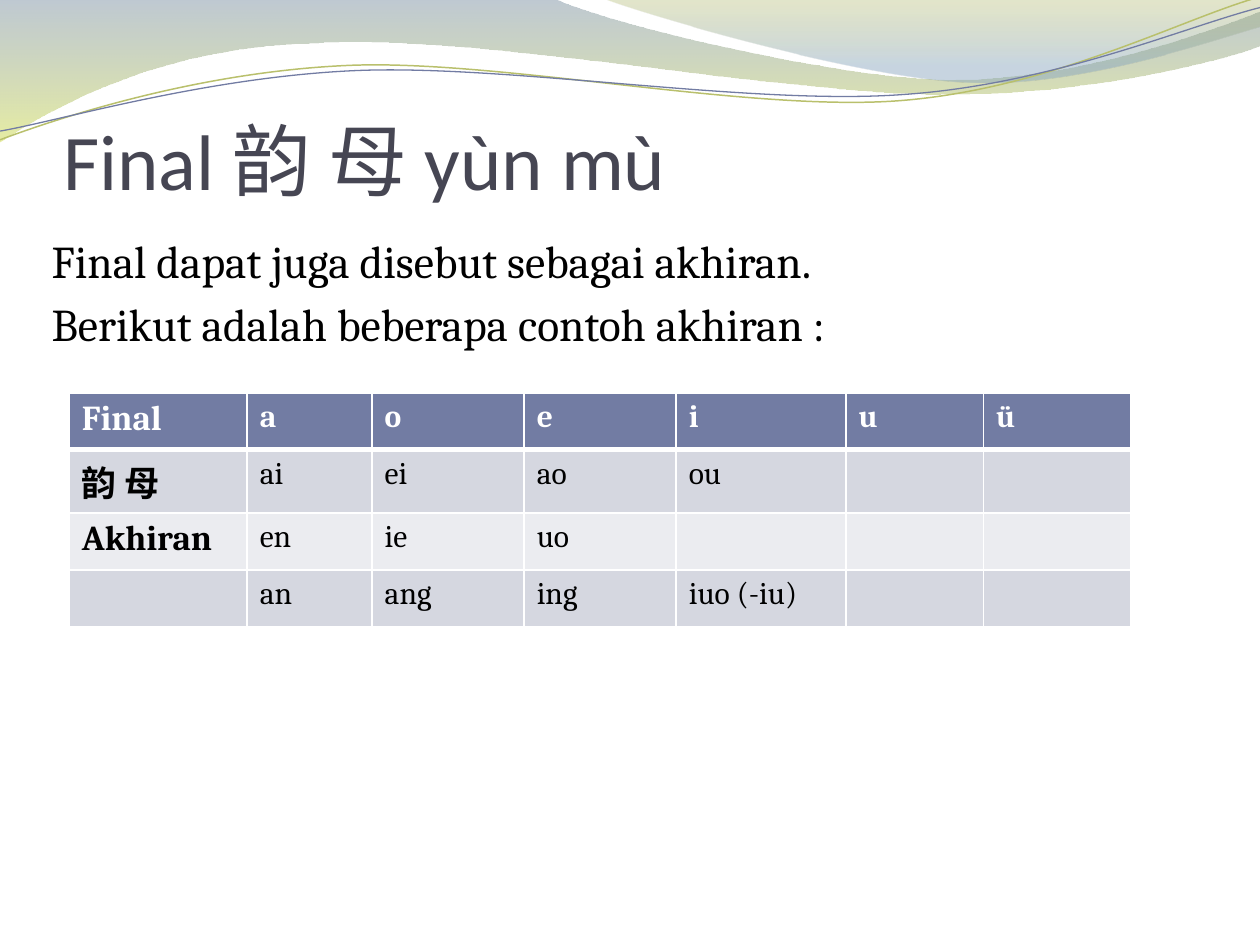
from lxml.etree import SubElement
from pptx import Presentation
from pptx.dml.color import RGBColor
from pptx.enum.text import MSO_ANCHOR, MSO_AUTO_SIZE, PP_ALIGN
from pptx.oxml.ns import qn
from pptx.util import Pt

WHITE = RGBColor(0xFF, 0xFF, 0xFF)
BLACK = RGBColor(0, 0, 0)
SLATE = RGBColor(0x46, 0x46, 0x53)
HEADER = RGBColor(0x72, 0x7C, 0xA3)
BAND_DARK = RGBColor(0xD5, 0xD7, 0xE0)
BAND_LIGHT = RGBColor(0xEB, 0xEC, 0xF0)
OLIVE = RGBColor(0xB9, 0xC0, 0x6C)
STEEL = RGBColor(0x72, 0x88, 0x9B)
LIME = RGBColor(0xD3, 0xDE, 0x57)
MOSS = RGBColor(0xA4, 0xAC, 0x50)
SKY = RGBColor(0x84, 0xA3, 0xBD)

TITLE = "Final 韵 母 yùn mù"
BODY = ["Final dapat juga disebut sebagai akhiran.",
        "Berikut adalah beberapa contoh akhiran :"]
TABLE = [["Final", "a", "o", "e", "i", "u", "ü"],
         ["韵 母", "ai", "ei", "ao", "ou", "", ""],
         ["Akhiran", "en", "ie", "uo", "", "", ""],
         ["", "an", "ang", "ing", "iuo (-iu)", "", ""]]
COL_WIDTHS = [101.7, 71.4, 86.9, 86.9, 97.1, 78.5, 84.2]
ROW_FILLS = [HEADER, BAND_DARK, BAND_LIGHT, BAND_DARK]
ROW_HEIGHT = 32.4
HEADER_BORDERS = [("a:lnL", 1), ("a:lnR", 1), ("a:lnT", 1), ("a:lnB", 3)]

# Each outline is a list of steps: 2 numbers end a line, 6 numbers end a cubic curve.
BANDS = [
    ([(-0.7, -0.7), (316.8, -0.7), (342.7, 12.2, 478.1, 45.4, 545.8, 45.4),
      (614.2, 45.4, 689.8, 18.7, 720, 6.5), (720.7, 25.9),
      (707.8, 31.7, 626.4, 54.7, 537.1, 54),
      (447.8, 54, 275, 20.2, 185, 24.5), (92.9, 25.9, 33.1, 59.8, -0.7, 81.4)],
     [(0, STEEL, 45), (1, LIME, 55)]),
    ([(344.9, -0.7), (366.5, 7.9, 491, 44.6, 553.7, 46.8),
      (616.3, 49.7, 691.9, 23, 720, 15.1), (720, 0)],
     [(0, MOSS, 30), (0.8, SKY, 45)]),
]
LINES = [
    ([(0, 79.9), (34.6, 67, 113.8, 41, 199.4, 37.4),
      (284.4, 33.8, 427, 64.1, 513.4, 57.6), (599.8, 51.1, 675.4, 10.8, 718.6, -1.4)],
     OLIVE, 0.85),
    ([(0, 74.9), (33.8, 69.1, 118.1, 43.9, 203.8, 40.3),
      (290.2, 36.7, 429.8, 60.5, 516.2, 54), (601.9, 48.2, 677.5, 15.1, 720, 4.3)],
     HEADER, 0.75),
]
UNITS = 100


def add_wave(slide, outline, close):
    steps = [[round(v * UNITS) for v in step] for step in outline]
    ends = [step[-2:] for step in steps]
    left, top = (min(values) for values in zip(*ends))
    builder = slide.shapes.build_freeform(*ends[0], scale=Pt(1) / UNITS)
    builder.add_line_segments(ends[1:], close=close)
    s = builder.convert_to_shape()
    s.shadow.inherit = False
    segments = list(s.element.spPr.iter(qn("a:lnTo")))
    for segment, step in zip(segments, steps[1:]):
        if len(step) == 2:
            continue
        curve = segment.makeelement(qn("a:cubicBezTo"))
        for x, y in zip(step[::2], step[1::2]):
            SubElement(curve, qn("a:pt"), x=str(x - left), y=str(y - top))
        segment.getparent().replace(segment, curve)
    return s


def add_band(slide, outline, stops):
    s = add_wave(slide, outline, True)
    s.fill.gradient()
    s.fill.gradient_angle = 270
    for stop, (position, color, _) in zip(s.fill.gradient_stops, stops):
        stop.position = position
        stop.color.rgb = color
    colors = s.element.spPr.iter(qn("a:srgbClr"))
    for color, (_, _, opacity) in zip(list(colors), stops):
        SubElement(color, qn("a:alpha"), val=str(opacity * 1000))
    s.line.fill.background()


def add_line(slide, outline, color, width):
    s = add_wave(slide, outline, False)
    s.fill.background()
    s.line.color.rgb = color
    s.line.width = Pt(width)


def place(s, left, top, width, height):
    s.left, s.top, s.width, s.height = Pt(left), Pt(top), Pt(width), Pt(height)


def style(p, font, size, color, bold=False):
    p.font.name, p.font.size, p.font.bold = font, Pt(size), bold
    p.font.color.rgb = color


def fill_title(s):
    place(s, 36, 55.4, 648, 62.6)
    tf = s.text_frame
    tf.auto_size = MSO_AUTO_SIZE.NONE
    tf.vertical_anchor = MSO_ANCHOR.BOTTOM
    tf.margin_left = tf.margin_right = tf.margin_bottom = 0
    tf.margin_top = Pt(3.6)
    tf.text = TITLE
    p = tf.paragraphs[0]
    p.alignment = PP_ALIGN.LEFT
    style(p, "Calibri", 45, SLATE)


def fill_body(s):
    place(s, 22.3, 129.6, 680.4, 388)
    tf = s.text_frame
    tf.auto_size = MSO_AUTO_SIZE.NONE
    tf.text = "\n".join(BODY)
    for p in tf.paragraphs:
        style(p, "Cambria", 26, BLACK)
        p.space_before = Pt(5)
        pPr = p._p.get_or_add_pPr()
        pPr.set("marL", str(Pt(21.6)))
        pPr.set("indent", str(-Pt(21.6)))
        pPr.insert_element_before(pPr.makeelement(qn("a:buNone")), "a:defRPr")


def add_header_borders(cell):
    tcPr = cell._tc.get_or_add_tcPr()
    for i, (side, width) in enumerate(HEADER_BORDERS):
        ln = tcPr.makeelement(qn(side), w=str(Pt(width)))
        SubElement(SubElement(ln, qn("a:solidFill")), qn("a:srgbClr"), val=str(WHITE))
        tcPr.insert(i, ln)


def add_finals_table(slide):
    s = slide.shapes.add_table(len(TABLE), len(COL_WIDTHS), Pt(39.6), Pt(224.6),
                               Pt(sum(COL_WIDTHS)), Pt(ROW_HEIGHT * len(TABLE)))
    table = s.table
    for column, width in zip(table.columns, COL_WIDTHS):
        column.width = Pt(width)
    for i, texts in enumerate(TABLE):
        table.rows[i].height = Pt(ROW_HEIGHT)
        for j, text in enumerate(texts):
            cell = table.cell(i, j)
            cell.fill.solid()
            cell.fill.fore_color.rgb = ROW_FILLS[i]
            cell.text = text
            style(cell.text_frame.paragraphs[0], "Cambria", 18 if j else 20,
                  BLACK if i else WHITE, i == 0 or j == 0)
            if i == 0:
                add_header_borders(cell)


def main():
    prs = Presentation()
    prs.slide_width, prs.slide_height = Pt(720), Pt(540)
    slide = prs.slides.add_slide(prs.slide_layouts[1])
    title, body = slide.placeholders
    for band in BANDS:
        add_band(slide, *band)
    for line in LINES:
        add_line(slide, *line)
    for s in (title, body):
        slide.shapes._spTree.append(s.element)
    fill_title(title)
    fill_body(body)
    add_finals_table(slide)
    prs.save("out.pptx")


if __name__ == "__main__":
    main()
